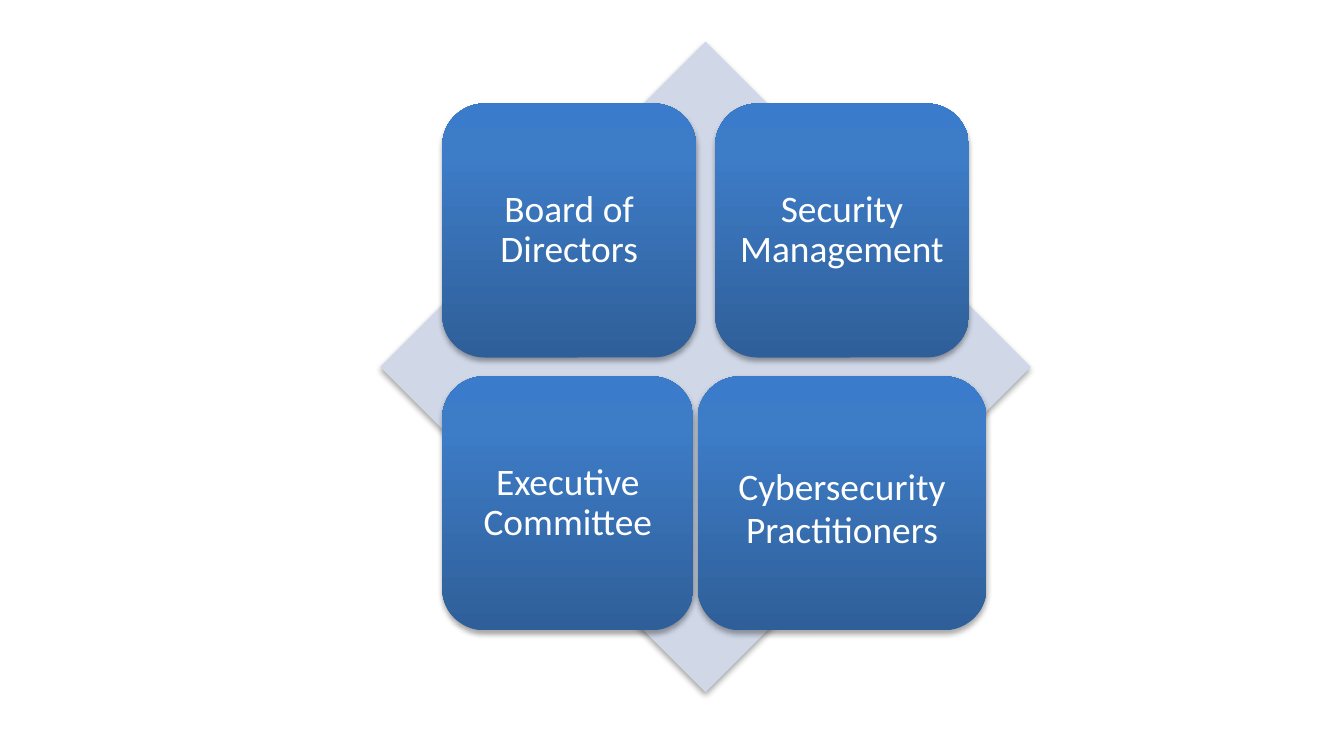
from lxml import etree
from pptx import Presentation
from pptx.dml.color import RGBColor
from pptx.enum.shapes import MSO_SHAPE
from pptx.enum.text import MSO_ANCHOR, PP_ALIGN
from pptx.oxml import parse_xml
from pptx.oxml.ns import nsdecls, qn
from pptx.util import Inches, Pt

DIAMOND = MSO_SHAPE.DIAMOND
ROUNDED = MSO_SHAPE.ROUNDED_RECTANGLE
MIDDLE = MSO_ANCHOR.MIDDLE
CENTER = PP_ALIGN.CENTER

COLORS = {
    "diamond": "D0D8E8",
    "tile_bottom": "2F5F99",
    "tile_middle": "3D7CC7",
    "tile_top": "3A7CCB",
    "text": "FFFFFF",
    "shadow": "000000",
}
TILE_STOPS = [(0, "tile_bottom"), (80, "tile_middle"), (100, "tile_top")]

# Matrix geometry in inches
LEFT, TOP, SIZE = 2.83, 0.31, 4.84
MARGIN, TILE, PITCH = 0.46, 1.89, 2.03


class MatrixSlide:
    font = "Calibri"
    text_size = 20
    blank_layout = 6

    def __init__(self, presentation):
        layout = presentation.slide_layouts[self.blank_layout]
        self.slide = presentation.slides.add_slide(layout)
        self.group = self.slide.shapes.add_group_shape()

    def add_shape(self, kind, left, top, width, height):
        shape = self.group.shapes.add_shape(
            kind, Inches(left), Inches(top), Inches(width), Inches(height))
        shape.line.fill.background()
        shape.shadow.inherit = False
        self.add_shadow(shape)
        return shape

    def add_shadow(self, shape):
        effects = shape.element.spPr.find(qn("a:effectLst"))
        shadow = etree.SubElement(
            effects, qn("a:outerShdw"), blurRad=str(Pt(3.1)),
            dist=str(Pt(1.8)), dir="5400000", rotWithShape="0")
        color = etree.SubElement(shadow, qn("a:srgbClr"), val=COLORS["shadow"])
        etree.SubElement(color, qn("a:alpha"), val="35000")

    def add_gradient(self, shape):
        """Fill the shape with the tile gradient, running from bottom to top."""
        stops = "".join(
            f'<a:gs pos="{share * 1000}"><a:srgbClr val="{COLORS[name]}"/></a:gs>'
            for share, name in TILE_STOPS)
        fill = parse_xml(
            f'<a:gradFill {nsdecls("a")} rotWithShape="1"><a:gsLst>{stops}</a:gsLst>'
            '<a:lin ang="16200000" scaled="0"/></a:gradFill>')
        shape.element.spPr.find(qn("a:prstGeom")).addnext(fill)

    def add_diamond(self):
        diamond = self.add_shape(DIAMOND, LEFT, TOP, SIZE, SIZE)
        diamond.fill.solid()
        diamond.fill.fore_color.rgb = RGBColor.from_string(COLORS["diamond"])

    def add_tile(self, column, row, runs, shift=0, width=TILE):
        """Place a tile in the matrix; shift moves its left edge off the grid."""
        tile = self.add_shape(
            ROUNDED, LEFT + MARGIN + column * PITCH + shift,
            TOP + MARGIN + row * PITCH, width, TILE)
        self.add_gradient(tile)
        frame = tile.text_frame
        frame.word_wrap = True
        frame.vertical_anchor = MIDDLE
        frame.margin_left = frame.margin_right = 0
        frame.margin_top = frame.margin_bottom = 0
        paragraph = frame.paragraphs[0]
        paragraph.alignment = CENTER
        paragraph.line_spacing = 0.9
        for text, size in runs:
            run = paragraph.add_run()
            run.text = text
            run.font.name = self.font
            run.font.size = Pt(size)
            run.font.color.rgb = RGBColor.from_string(COLORS["text"])


def main():
    presentation = Presentation()
    presentation.slide_width = Inches(10)
    presentation.slide_height = presentation.slide_width * 9 // 16

    matrix = MatrixSlide(presentation)
    size = matrix.text_size
    matrix.add_diamond()
    matrix.add_tile(0, 0, [("Board of Directors", size)])
    matrix.add_tile(1, 0, [("Security Management", size)])
    matrix.add_tile(0, 1, [("Executive Committee", size)], width=1.87)
    matrix.add_tile(
        1, 1, [("Cybersecurity", size), (" ", 28), ("Practitioners", size)],
        shift=-0.13, width=2.15)

    presentation.save("out.pptx")


if __name__ == "__main__":
    main()
